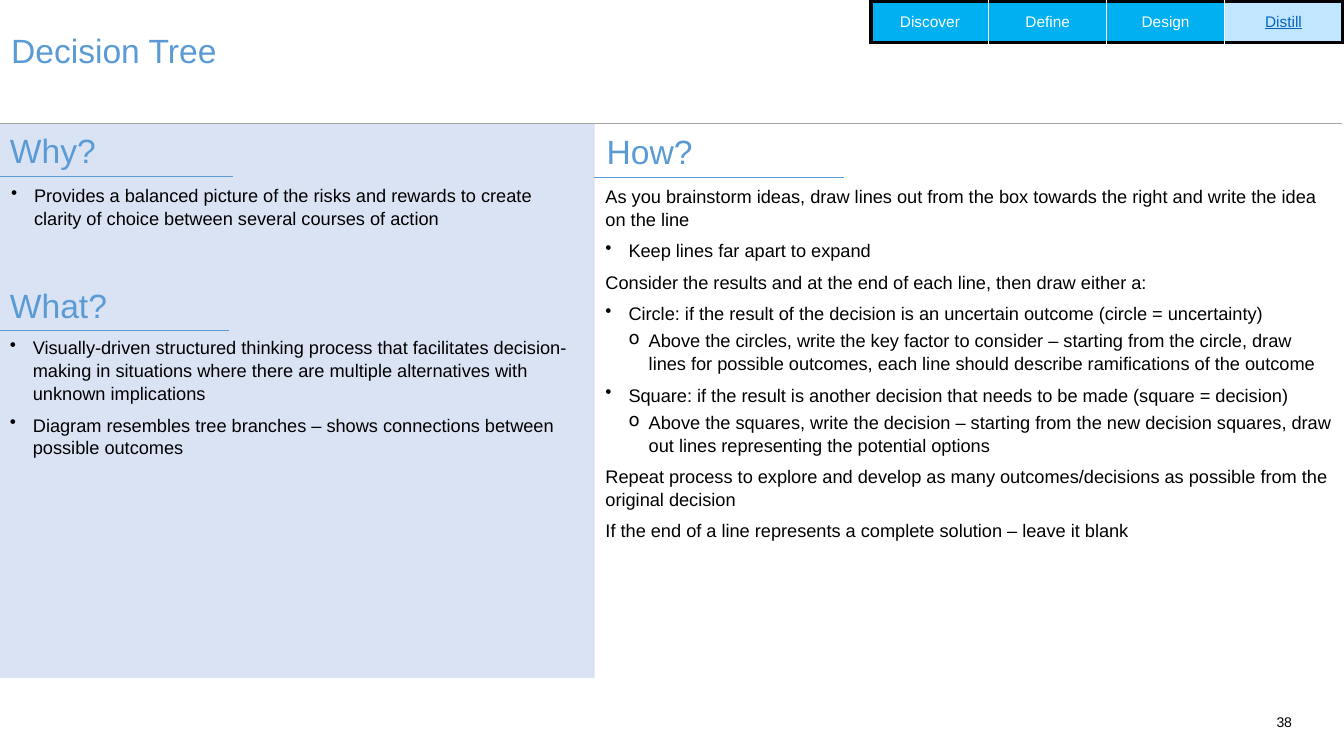
from lxml.etree import SubElement
from pptx import Presentation
from pptx.dml.color import RGBColor
from pptx.enum.shapes import MSO_CONNECTOR, MSO_SHAPE
from pptx.enum.text import MSO_ANCHOR, PP_ALIGN
from pptx.oxml import parse_xml
from pptx.oxml.ns import nsdecls, qn
from pptx.util import Cm, Pt

FONT = "Arial"
BLUE, BLACK, WHITE, GREY = "5B9BD5", "000000", "FFFFFF", "A6A6A6"
PANEL_FILL, LINK_BLUE = "DAE3F3", "0563C1"

# Bullet level: (character, left margin, hanging indent), margins in cm
BULLETS = {0: ("•", 0.58, 0.58), 1: ("o", 1.09, 0.51)}

# Text, (left, top, width, height) in cm, wrap
HEADINGS = [
    ("Decision Tree", (0.03, 0.64, 20.73, 1.27), True),
    ("Why?", (0, 3.15, 2.72, 1.3), False),
    ("What?", (0, 7.06, 3.02, 1.3), False),
    ("How?", (15.04, 3.18, 3.1, 1.3), True),
]

# Start, end and height in cm, colour
RULES = [
    (-0.05, 5.87, 4.45, BLUE),
    (-0.05, 5.77, 8.33, BLUE),
    (14.96, 21.26, 4.47, BLUE),
    (-0.05, 33.83, 3.12, GREY),
]

# Position in cm, then paragraphs of (bullet level or None, space after, text)
BODIES = [
    ((0.03, 4.5, 14.5, 1.37), [
        (0, 7.3, "Provides a balanced picture of the risks and rewards to create clarity "
                 "of choice between several courses of action"),
    ]),
    ((0, 8.33, 14.96, 4.01), [
        (0, 6, "Visually-driven structured thinking process that facilitates decision-making "
               "in situations where there are multiple alternatives with unknown implications"),
        (0, 6, "Diagram resembles tree branches – shows connections between possible outcomes"),
    ]),
    ((15.01, 4.52, 18.8, 8.97), [
        (None, 6, "As you brainstorm ideas, draw lines out from the box towards the right "
                  "and write the idea on the line"),
        (0, 6, "Keep lines far apart to expand"),
        (None, 6, "Consider the results and at the end of each line, then draw either a:"),
        (0, 3, "Circle: if the result of the decision is an uncertain outcome "
               "(circle = uncertainty)"),
        (1, 6, "Above the circles, write the key factor to consider – starting from the circle, "
               "draw lines for possible outcomes, each line should describe ramifications "
               "of the outcome"),
        (0, 3, "Square: if the result is another decision that needs to be made "
               "(square = decision)"),
        (1, 6, "Above the squares, write the decision – starting from the new decision squares, "
               "draw out lines representing the potential options"),
        (None, 6, "Repeat process to explore and develop as many outcomes/decisions as possible "
                  "from the original decision"),
        (None, 6, "If the end of a line represents a complete solution – leave it blank"),
    ]),
]

# Label, fill, text colour, underlined
STAGES = [
    ("Discover", "00B0F0", WHITE, False),
    ("Define", "00B0F0", WHITE, False),
    ("Design", "00B0F0", WHITE, False),
    ("Distill", "C0E7FF", LINK_BLUE, True),
]
STAGE_LEFT, STAGE_TOP, STAGE_WIDTH, STAGE_HEIGHT = 21.95, 0.03, 2.97, 1.04


def color(value):
    return RGBColor.from_string(value)


def write(paragraph, text, size=13, ink=BLACK, align=None, underline=None,
          level=None, after=None, spacing=None):
    """Fill a paragraph; a level gives it a hanging bullet."""
    paragraph.alignment = align
    paragraph.line_spacing = spacing
    if after is not None:
        paragraph.space_after = Pt(after)
    if level is not None:
        character, margin, hanging = BULLETS[level]
        paragraph.level = level
        properties = paragraph._p.get_or_add_pPr()
        properties.set("marL", str(Cm(margin)))
        properties.set("indent", str(-Cm(hanging)))
        SubElement(properties, qn("a:buChar")).set("char", character)
    run = paragraph.add_run()
    run.text = text
    run.font.name = FONT
    run.font.size = Pt(size)
    run.font.underline = underline
    run.font.color.rgb = color(ink)


def add_text_frame(slide, position, wrap=True):
    frame = slide.shapes.add_textbox(*map(Cm, position)).text_frame
    frame.word_wrap = wrap
    return frame


def add_rule(slide, start, end, height, ink):
    line = slide.shapes.add_connector(
        MSO_CONNECTOR.STRAIGHT, Cm(start), Cm(height), Cm(end), Cm(height))
    line.line.color.rgb = color(ink)
    line.line.width = Pt(0.5)
    SubElement(line._element.spPr, qn("a:effectLst"))


def set_borders(cell, borders):
    """Put (side, colour, points) borders ahead of the cell's fill."""
    properties = cell._tc.get_or_add_tcPr()
    for index, (side, ink, points) in enumerate(borders):
        properties.insert(index, parse_xml(
            f'<a:ln{side} {nsdecls("a")} w="{Pt(points)}"><a:solidFill>'
            f'<a:srgbClr val="{ink}"/></a:solidFill></a:ln{side}>'))


def add_stages(slide):
    count = len(STAGES)
    table = slide.shapes.add_table(
        1, count, Cm(STAGE_LEFT), Cm(STAGE_TOP),
        Cm(STAGE_WIDTH * count), Cm(STAGE_HEIGHT)).table
    table.first_row = table.horz_banding = False
    outer, inner = (BLACK, 3), (WHITE, 1)
    for index, (label, fill, ink, underline) in enumerate(STAGES):
        cell = table.cell(0, index)
        cell.fill.solid()
        cell.fill.fore_color.rgb = color(fill)
        cell.vertical_anchor = MSO_ANCHOR.MIDDLE
        write(cell.text_frame.paragraphs[0], label, size=11, ink=ink,
              align=PP_ALIGN.CENTER, underline=underline)
        left = outer if index == 0 else inner
        right = outer if index == count - 1 else inner
        set_borders(cell, [("L", *left), ("R", *right), ("T", *outer), ("B", *outer)])


def main():
    presentation = Presentation()
    presentation.slide_width, presentation.slide_height = Cm(33.87), Cm(19.05)
    slide = presentation.slides.add_slide(presentation.slide_layouts[6])

    number = add_text_frame(slide, (31.7, 17.98, 0.86, 0.43))
    number.margin_left = number.margin_right = number.margin_top = number.margin_bottom = 0
    write(number.paragraphs[0], "38", size=10, align=PP_ALIGN.RIGHT)

    panel = slide.shapes.add_shape(MSO_SHAPE.RECTANGLE, Cm(0), Cm(3.12), Cm(14.99), Cm(13.97))
    panel.shadow.inherit = False
    panel.fill.solid()
    panel.fill.fore_color.rgb = color(PANEL_FILL)
    panel.line.fill.background()

    for text, position, wrap in HEADINGS:
        frame = add_text_frame(slide, position, wrap)
        write(frame.paragraphs[0], text, size=24, ink=BLUE)

    for rule in RULES:
        add_rule(slide, *rule)

    for position, paragraphs in BODIES:
        frame = add_text_frame(slide, position)
        for index, (level, after, text) in enumerate(paragraphs):
            paragraph = frame.add_paragraph() if index else frame.paragraphs[0]
            write(paragraph, text, level=level, after=after, spacing=1.05)

    add_stages(slide)
    presentation.save("out.pptx")


if __name__ == "__main__":
    main()
